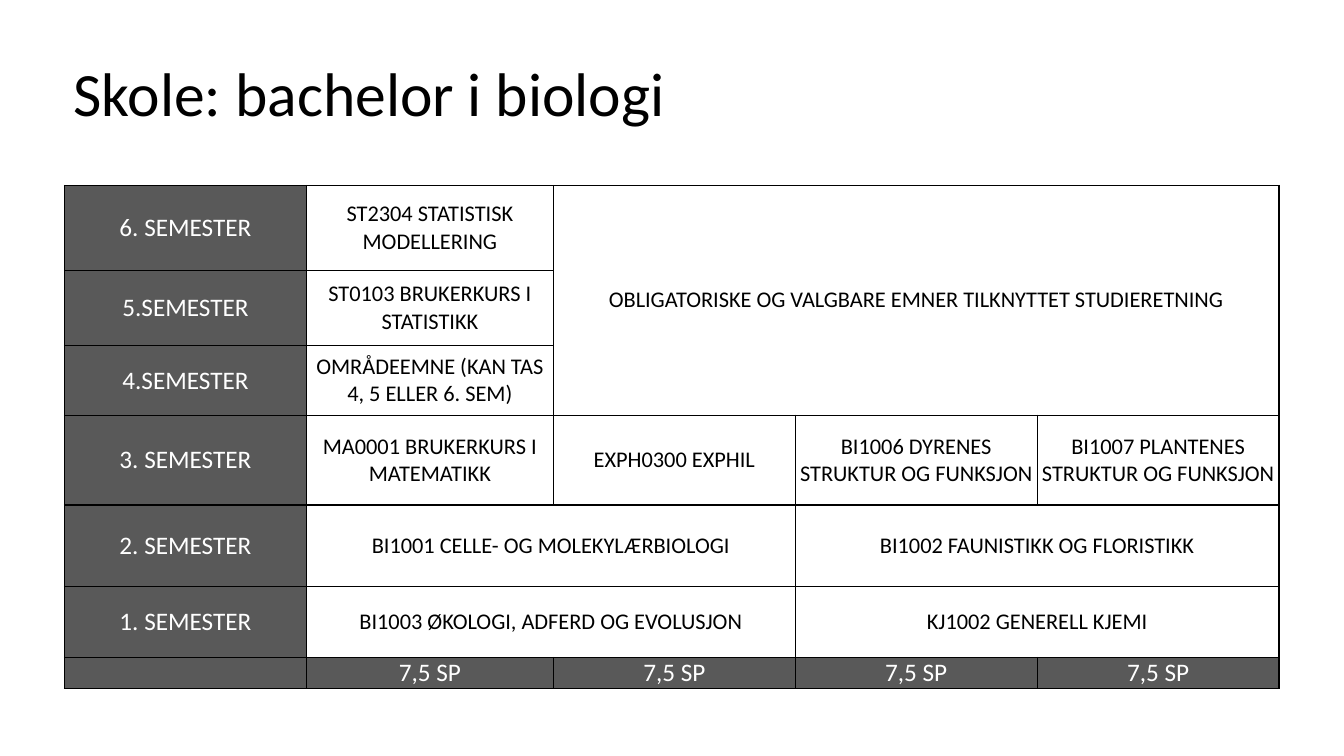
"""Build a slide with the semester plan of a bachelor programme in biology."""
from dataclasses import dataclass

from lxml import etree
from pptx import Presentation, util as u
from pptx.dml.color import RGBColor
from pptx.enum import text
from pptx.oxml import ns

COLORS = {"ink": "000000", "paper": "FFFFFF", "header": "595959"}
FONT = "Calibri"
SLIDE_WIDTH, SLIDE_HEIGHT = u.Inches(13.333), u.Inches(7.5)
COLUMN_SHARES = [18, 18.38, 18, 18, 18]
ROW_SHARES = [11.2, 10, 9.2, 11.87, 10.8, 9.38, 4.13]
SEMESTERS = ["6. SEMESTER", "5.SEMESTER", "4.SEMESTER",
             "3. SEMESTER", "2. SEMESTER", "1. SEMESTER", ""]


@dataclass
class Block:
    row: int
    column: int
    label: str
    rows: int = 1
    columns: int = 1
    header: bool = False


COURSES = [
    Block(0, 1, "ST2304 STATISTISK MODELLERING"),
    Block(0, 2, "OBLIGATORISKE OG VALGBARE EMNER TILKNYTTET STUDIERETNING", 3, 3),
    Block(1, 1, "ST0103 BRUKERKURS I STATISTIKK"),
    Block(2, 1, "OMRÅDEEMNE (KAN TAS 4, 5 ELLER 6. SEM)"),
    Block(3, 1, "MA0001 BRUKERKURS I MATEMATIKK"),
    Block(3, 2, "EXPH0300 EXPHIL"),
    Block(3, 3, "BI1006 DYRENES STRUKTUR OG FUNKSJON"),
    Block(3, 4, "BI1007 PLANTENES STRUKTUR OG FUNKSJON"),
    Block(4, 1, "BI1001 CELLE- OG MOLEKYLÆRBIOLOGI", columns=2),
    Block(4, 3, "BI1002 FAUNISTIKK OG FLORISTIKK", columns=2),
    Block(5, 1, "BI1003 ØKOLOGI, ADFERD OG EVOLUSJON", columns=2),
    Block(5, 3, "KJ1002 GENERELL KJEMI", columns=2),
]
HEADERS = [Block(row, 0, label, header=True) for row, label in enumerate(SEMESTERS)]
CREDITS = [Block(6, column, "7,5 SP", header=True) for column in range(1, 5)]


def across(percent: float) -> int:
    return round(SLIDE_WIDTH * percent / 100)


def down(percent: float) -> int:
    return round(SLIDE_HEIGHT * percent / 100)


def add_run(paragraph, label: str, size: int, color: str) -> None:
    run = paragraph.add_run()
    run.text = label
    run.font.name, run.font.size = FONT, u.Pt(size)
    run.font.color.rgb = RGBColor.from_string(COLORS[color])


def add_borders(cell) -> None:
    properties = cell._tc.get_or_add_tcPr()
    for position, side in enumerate(("lnL", "lnR", "lnT", "lnB")):
        line = etree.Element(ns.qn(f"a:{side}"), w=str(u.Pt(1)))
        fill = etree.SubElement(line, ns.qn("a:solidFill"))
        etree.SubElement(fill, ns.qn("a:srgbClr"), val=COLORS["ink"])
        properties.insert(position, line)


def draw_block(table, block: Block) -> None:
    cell = table.cell(block.row, block.column)
    if block.rows * block.columns > 1:
        cell.merge(table.cell(block.row + block.rows - 1,
                              block.column + block.columns - 1))
    if block.header:
        cell.fill.solid()
        cell.fill.fore_color.rgb = RGBColor.from_string(COLORS["header"])
    paragraph = cell.text_frame.paragraphs[0]
    paragraph.alignment = text.PP_ALIGN.CENTER
    if block.label:
        size, color = (18, "paper") if block.header else (16, "ink")
        add_run(paragraph, block.label, size, color)


def draw_title(slide, label: str) -> None:
    title = slide.shapes.title
    title.left, title.top = across(4.72), down(3.07)
    title.width, title.height = across(86.25), down(19.33)
    title.text_frame.vertical_anchor = text.MSO_ANCHOR.MIDDLE
    paragraph = title.text_frame.paragraphs[0]
    paragraph.alignment = text.PP_ALIGN.LEFT
    paragraph.line_spacing = 0.9
    add_run(paragraph, label, 44, "ink")


def draw_plan(slide, blocks: list[Block]) -> None:
    table = slide.shapes.add_table(
        len(ROW_SHARES), len(COLUMN_SHARES), across(4.8), down(24.53),
        across(sum(COLUMN_SHARES)), down(sum(ROW_SHARES))).table
    table.first_row = table.horz_banding = False
    for column, share in zip(table.columns, COLUMN_SHARES):
        column.width = across(share)
    for row, share in zip(table.rows, ROW_SHARES):
        row.height = down(share)
    for cell in table.iter_cells():
        cell.margin_left = cell.margin_right = 0
        cell.margin_top = cell.margin_bottom = 0
        cell.vertical_anchor = text.MSO_ANCHOR.MIDDLE
        cell.fill.background()
        add_borders(cell)
    for block in blocks:
        draw_block(table, block)


def main() -> None:
    presentation = Presentation()
    presentation.slide_width, presentation.slide_height = SLIDE_WIDTH, SLIDE_HEIGHT
    slide = presentation.slides.add_slide(presentation.slide_layouts[5])
    draw_title(slide, "Skole: bachelor i biologi")
    draw_plan(slide, HEADERS + COURSES + CREDITS)
    presentation.save("out.pptx")


if __name__ == "__main__":
    main()
